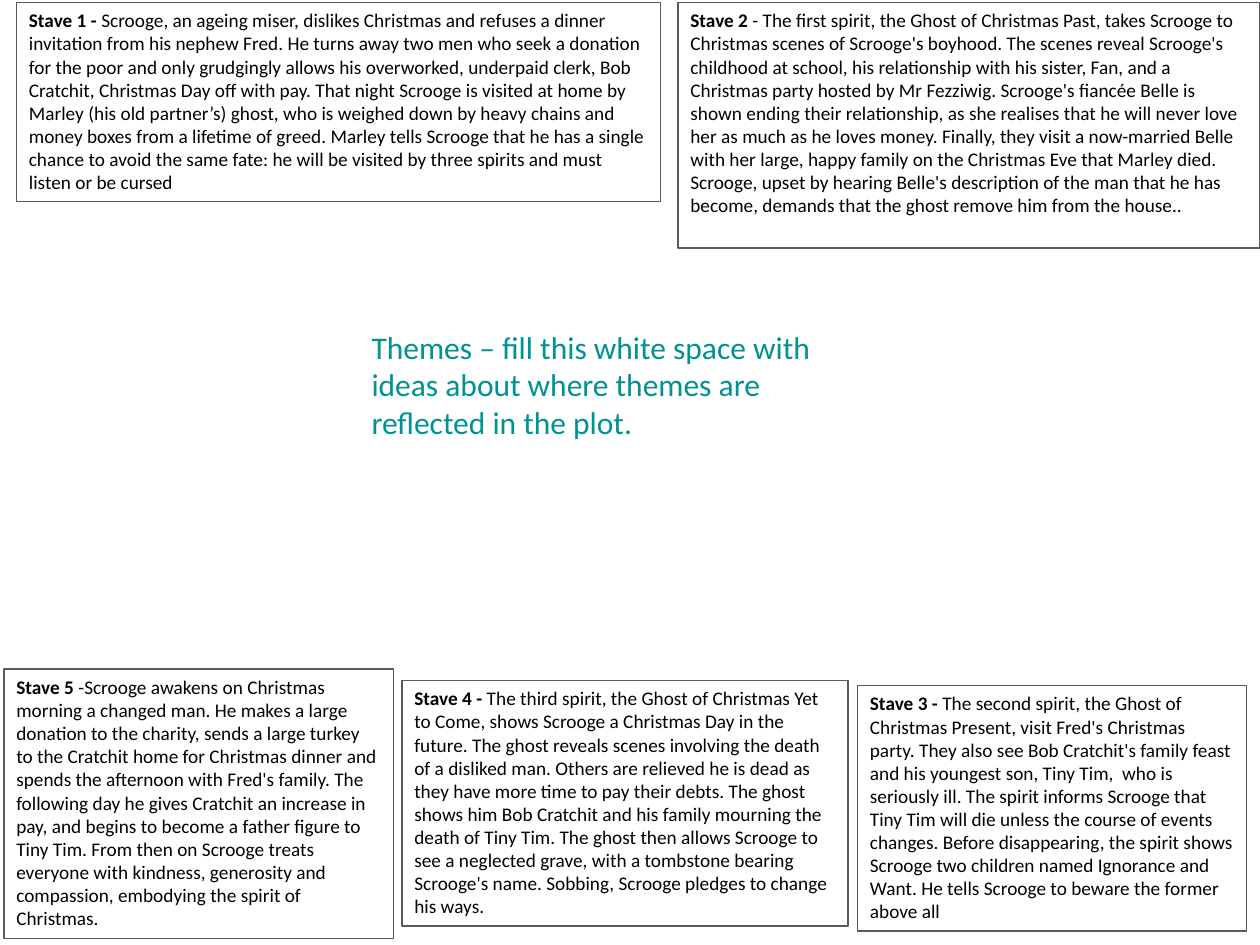
from lxml.etree import SubElement
from pptx import Presentation
from pptx.dml.color import RGBColor
from pptx.enum.shapes import MSO_SHAPE
from pptx.enum.text import MSO_ANCHOR, MSO_AUTO_SIZE, PP_ALIGN
from pptx.oxml.ns import qn
from pptx.util import Pt

FRAME_FORMAT = {
    "word_wrap": True,
    "auto_size": MSO_AUTO_SIZE.SHAPE_TO_FIT_TEXT,
    "vertical_anchor": MSO_ANCHOR.TOP,
}

# Each stave: left, top, width, height in points, then heading and summary
STAVES = [
    (9.4, 1.4, 367.9, 113.8, "Stave 1 - ",
     "Scrooge, an ageing miser, dislikes Christmas and refuses a dinner invitation from his "
     "nephew Fred. He turns away two men who seek a donation for the poor and only grudgingly "
     "allows his overworked, underpaid clerk, Bob Cratchit, Christmas Day off with pay. That "
     "night Scrooge is visited at home by Marley (his old partner’s) ghost, who is weighed down "
     "by heavy chains and money boxes from a lifetime of greed. Marley tells Scrooge that he has "
     "a single chance to avoid the same fate: he will be visited by three spirits and must "
     "listen or be cursed"),
    (387.4, 1.4, 332.6, 140.4, "Stave 2 ",
     "- The first spirit, the Ghost of Christmas Past, takes Scrooge to Christmas scenes of "
     "Scrooge's boyhood. The scenes reveal Scrooge's childhood at school, his relationship with "
     "his sister, Fan, and a Christmas party hosted by Mr Fezziwig. Scrooge's fiancée Belle is "
     "shown ending their relationship, as she realises that he will never love her as much as he "
     "loves money. Finally, they visit a now-married Belle with her large, happy family on the "
     "Christmas Eve that Marley died. Scrooge, upset by hearing Belle's description of the man "
     "that he has become, demands that the ghost remove him from the house.."),
    (490, 391.7, 222.5, 140.4, "Stave 3 - ",
     "The second spirit, the Ghost of Christmas Present, visit Fred's Christmas party. They also "
     "see Bob Cratchit's family feast and his youngest son, Tiny Tim,  who is seriously ill. The "
     "spirit informs Scrooge that Tiny Tim will die unless the course of events changes. Before "
     "disappearing, the spirit shows Scrooge two children named Ignorance and Want. He tells "
     "Scrooge to beware the former above all"),
    (229.7, 388.8, 254.9, 140.4, "Stave 4 - ",
     "The third spirit, the Ghost of Christmas Yet to Come, shows Scrooge a Christmas Day in the "
     "future. The ghost reveals scenes involving the death of a disliked man. Others are "
     "relieved he is dead as they have more time to pay their debts. The ghost shows him Bob "
     "Cratchit and his family mourning the death of Tiny Tim. The ghost then allows Scrooge to "
     "see a neglected grave, with a tombstone bearing Scrooge's name. Sobbing, Scrooge pledges "
     "to change his ways."),
    (2.2, 382.3, 222.5, 154.1, "Stave 5 ",
     "-Scrooge awakens on Christmas morning a changed man. He makes a large donation to the "
     "charity, sends a large turkey to the Cratchit home for Christmas dinner and spends the "
     "afternoon with Fred's family. The following day he gives Cratchit an increase in pay, and "
     "begins to become a father figure to Tiny Tim. From then on Scrooge treats everyone with "
     "kindness, generosity and compassion, embodying the spirit of Christmas."),
]


def color(hex_value):
    return RGBColor.from_string(hex_value)


def apply_format(target, values):
    for name, value in values.items():
        setattr(target, name, value)


def add_panel(slide, bounds, runs, size, text_color):
    """Add a rectangle whose text is a list of (words, bold) runs."""
    panel = slide.shapes.add_shape(MSO_SHAPE.RECTANGLE, *map(Pt, bounds))
    panel.shadow.inherit = False
    apply_format(panel.text_frame, FRAME_FORMAT)
    paragraph = panel.text_frame.paragraphs[0]
    paragraph.alignment = PP_ALIGN.LEFT
    for words, bold in runs:
        run = paragraph.add_run()
        run.text = words
        apply_format(run.font, {"name": "Calibri", "size": Pt(size), "bold": bold})
        run.font.color.rgb = color(text_color)
    return panel


def add_stave(slide, bounds, heading, summary):
    stave = add_panel(slide, bounds, [(heading, True), (summary, False)], 11, "000000")
    stave.fill.background()
    stave.line.color.rgb = color("595959")
    stave.line.width = Pt(0.75)


def add_prompt(slide, bounds, words):
    prompt = add_panel(slide, bounds, [(words, False)], 18, "009193")
    prompt.line.fill.background()
    prompt.fill.solid()
    prompt.fill.fore_color.rgb = color("FFFFFF")
    # Make the white fill 45% opaque
    white = prompt.fill._xPr.find(qn("a:solidFill")).find(qn("a:srgbClr"))
    SubElement(white, qn("a:alpha")).set("val", "45000")


def main():
    presentation = Presentation()
    presentation.slide_width, presentation.slide_height = Pt(720), Pt(540)
    slide = presentation.slides.add_slide(presentation.slide_layouts[6])

    # Plot summaries around the edge
    for *bounds, heading, summary in STAVES:
        add_stave(slide, bounds, heading, summary)

    # Task in the middle
    add_prompt(slide, (205.2, 183.6, 265.7, 72.7),
               "Themes – fill this white space with ideas about where themes are "
               "reflected in the plot.")

    presentation.save("out.pptx")


if __name__ == "__main__":
    main()
